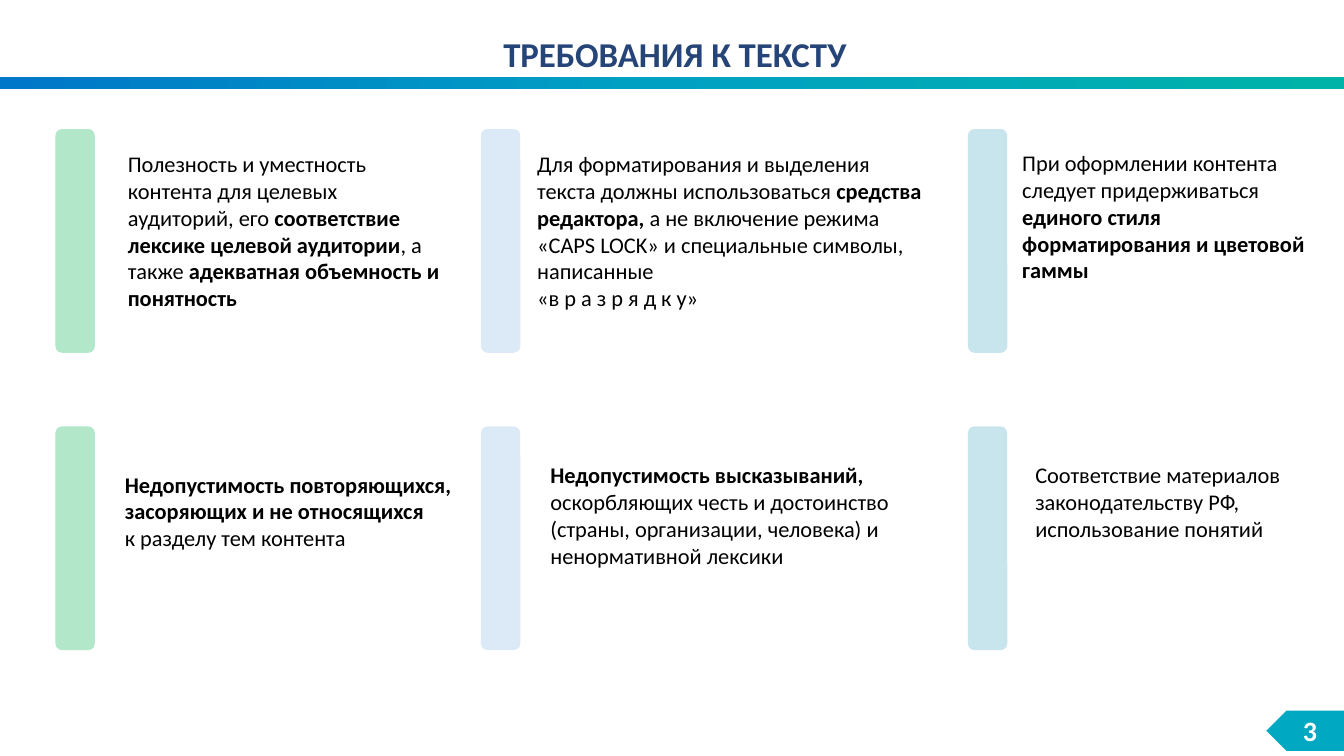
from copy import deepcopy
from dataclasses import dataclass

from lxml import etree
from pptx import Presentation
from pptx import util as u
from pptx.dml.color import RGBColor
from pptx.enum import shapes, text
from pptx.oxml.ns import qn


@dataclass(frozen=True)
class Theme:
    """Colours, font and type sizes of the slide."""
    font: str = "Calibri"
    heading: str = "254478"
    body: str = "000000"
    light: str = "FFFFFF"
    tag: str = "00A9C1"
    band: tuple = ((0, "0077C8"), (0.48, "00A0C3"), (1, "00B3A9"))
    bars: tuple = (("B2E7CA", 100), ("0070C0", 14), ("4BACC6", 30))
    heading_size: float = 24.9
    body_size: float = 16
    tag_size: float = 20


THEME = Theme()
WIDTH, HEIGHT = 13.33, 7.5
COLUMNS = (0.55, 4.77, 9.6)
ROWS = (1.28, 4.23)
BAR_WIDTH, BAR_HEIGHT = 0.39, 2.22

# Each requirement: column, row, offset from its bar, width and height, wording.
REQUIREMENTS = (
    (0, 0, (0.62, 0.16), (3.37, 1.99),
     "Полезность и уместность контента для целевых аудиторий, его **соответствие "
     "лексике целевой аудитории**, а также **адекватная объемность и понятность**"),
    (1, 0, (0.46, 0.16), (4.07, 1.72),
     "Для форматирования и выделения текста должны использоваться **средства "
     "редактора,** а не включение режима «CAPS LOCK» и специальные символы, "
     "написанные\v«в р а з р я д к у»"),
    (2, 0, (0.44, 0.15), (3.19, 1.45),
     "При оформлении контента следует придерживаться **единого стиля "
     "форматирования и цветовой гаммы**"),
    (0, 1, (0.59, 0.39), (3.53, 1.45),
     "**Недопустимость повторяющихся, засоряющих и не относящихся**\n"
     "к разделу тем контента"),
    (1, 1, (0.59, 0.3), (3.89, 1.45),
     "**Недопустимость высказываний,** оскорбляющих честь и достоинство "
     "(страны, организации, человека) и ненормативной лексики"),
    (2, 1, (0.57, 0.3), (2.8, 1.18),
     "Соответствие материалов законодательству РФ, использование понятий"),
)


def write(frame, wording, *, size, color, bold=False,
          align=text.PP_ALIGN.LEFT, anchor=text.MSO_ANCHOR.TOP):
    """Fill a text frame; double asterisks switch bold, \\v breaks a line."""
    frame.word_wrap = True
    frame.vertical_anchor = anchor
    for number, line in enumerate(wording.split("\n")):
        paragraph = frame.add_paragraph() if number else frame.paragraphs[0]
        paragraph.alignment = align
        for part, phrase in enumerate(line.split("**")):
            for piece, words in enumerate(phrase.split("\v")):
                if piece:
                    paragraph.add_line_break()
                if not words:
                    continue
                run = paragraph.add_run()
                run.text = words
                run.font.name = THEME.font
                run.font.size = u.Pt(size)
                run.font.bold = bold or part % 2 == 1
                run.font.color.rgb = RGBColor.from_string(color)


def add_block(slide, preset, box, color=None, opacity=100):
    """Add a preset shape without line or shadow."""
    block = slide.shapes.add_shape(preset, *map(u.Inches, box))
    block.shadow.inherit = False
    block.line.fill.background()
    if color:
        block.fill.solid()
        block.fill.fore_color.rgb = RGBColor.from_string(color)
        if opacity < 100:
            tint = block.fill._xPr.find(".//" + qn("a:srgbClr"))
            etree.SubElement(tint, qn("a:alpha")).set("val", str(opacity * 1000))
    return block


def add_heading(slide, wording):
    """Place and format the title across the slide."""
    heading = slide.shapes.title
    heading.left, heading.top = u.Inches(0), u.Inches(0.27)
    heading.width, heading.height = u.Inches(WIDTH), u.Inches(0.52)
    heading.text_frame.margin_left = u.Inches(0.16)
    heading.text_frame.auto_size = text.MSO_AUTO_SIZE.SHAPE_TO_FIT_TEXT
    write(heading.text_frame, wording, size=THEME.heading_size,
          color=THEME.heading, bold=True, align=text.PP_ALIGN.CENTER)


def add_band(slide):
    """Add the gradient band under the title."""
    band = add_block(slide, shapes.MSO_SHAPE.RECTANGLE, (0, 0.76, WIDTH, 0.12))
    band.fill.gradient()
    band.fill.gradient_angle = 0
    first = band._element.spPr.find(".//" + qn("a:gs"))
    first.addnext(deepcopy(first))
    for stop, (position, color) in zip(band.fill.gradient_stops, THEME.band):
        stop.position = position
        stop.color.rgb = RGBColor.from_string(color)


def add_requirement(slide, column, row, offset, size, wording):
    """Add one requirement: a coloured bar and the text beside it."""
    left, top = COLUMNS[column], ROWS[row]
    add_block(slide, shapes.MSO_SHAPE.ROUNDED_RECTANGLE,
              (left, top, BAR_WIDTH, BAR_HEIGHT), *THEME.bars[column])
    box = (left + offset[0], top + offset[1], *size)
    frame = slide.shapes.add_textbox(*map(u.Inches, box)).text_frame
    write(frame, wording, size=THEME.body_size, color=THEME.body)


def add_page_tag(slide, number):
    """Add the page number on an arrow at the lower right edge."""
    width = 0.77
    tag = add_block(slide, shapes.MSO_SHAPE.PENTAGON,
                    (WIDTH - width, 7.05, width, 0.4), THEME.tag)
    tag._element.spPr.xfrm.set("flipH", "1")
    write(tag.text_frame, number, size=THEME.tag_size, color=THEME.light,
          bold=True, align=text.PP_ALIGN.CENTER, anchor=text.MSO_ANCHOR.MIDDLE)


def main():
    """Build the slide and save it."""
    deck = Presentation()
    deck.slide_width, deck.slide_height = u.Inches(WIDTH), u.Inches(HEIGHT)
    slide = deck.slides.add_slide(deck.slide_layouts[5])
    add_heading(slide, "ТРЕБОВАНИЯ К ТЕКСТУ")
    add_band(slide)
    for requirement in REQUIREMENTS:
        add_requirement(slide, *requirement)
    add_page_tag(slide, "3")
    deck.save("out.pptx")


if __name__ == "__main__":
    main()
